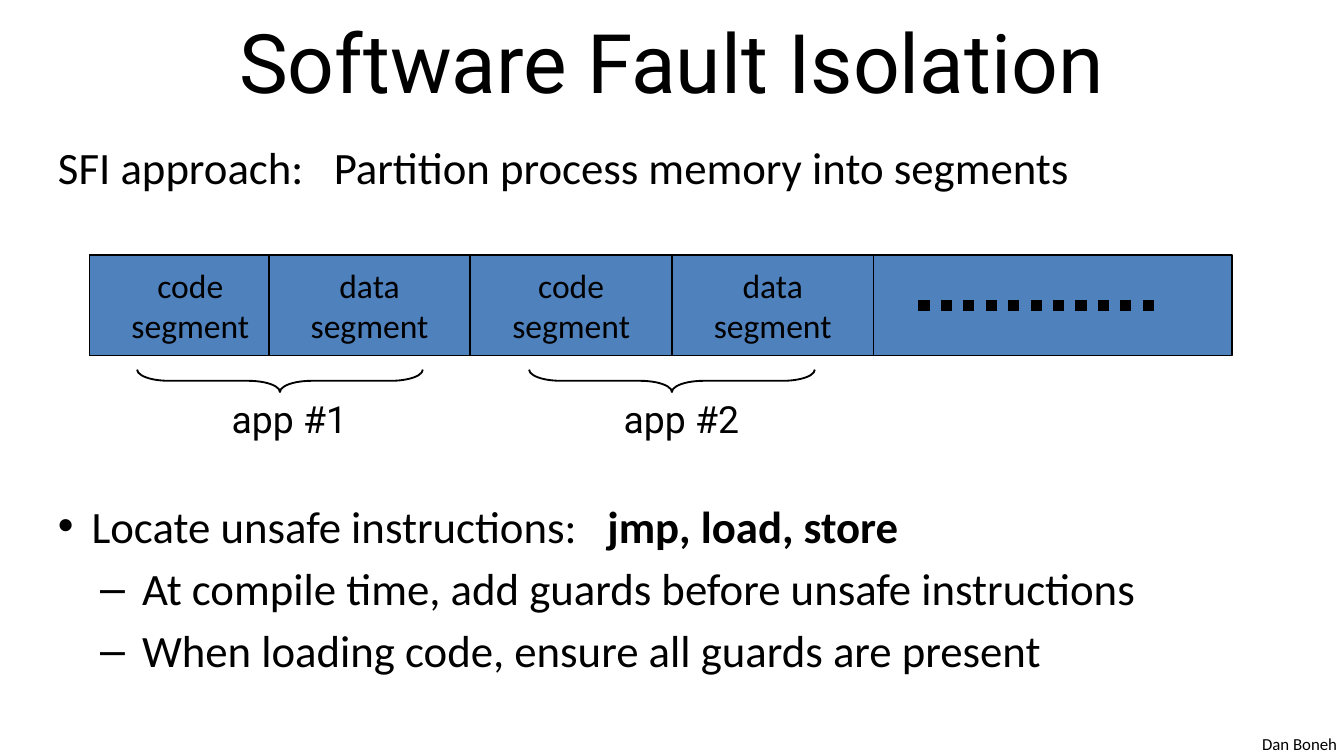
"""Build the Software Fault Isolation slide."""
from dataclasses import dataclass
from typing import Optional

from lxml.etree import SubElement
from pptx import Presentation
from pptx.dml.color import RGBColor as Rgb
from pptx.enum.dml import MSO_LINE_DASH_STYLE as Dash
from pptx.enum.shapes import MSO_CONNECTOR as Link, MSO_SHAPE as Shape
from pptx.enum.text import MSO_ANCHOR as Anchor, PP_ALIGN as Align
from pptx.oxml.ns import qn
from pptx.util import Emu, Pt

EMU_PER_PX = 9525


@dataclass(frozen=True)
class Theme:
    ink: Rgb = Rgb(0, 0, 0)
    segment: Rgb = Rgb(0x4F, 0x81, 0xBD)
    text_font: str = "Calibri"
    display_font: str = "Roboto"
    title: int = 44
    body: int = 24
    app: int = 20
    label: int = 18
    footer: int = 9
    outline: int = 1
    dots: int = 6


@dataclass(frozen=True)
class Box:
    left: int
    top: int
    width: int
    height: int


@dataclass(frozen=True)
class Line:
    text: str
    strong: str = ""
    bullet: str = ""
    margin: int = 0
    hanging: int = 0
    before: float = 0


@dataclass(frozen=True)
class Segment:
    left: int
    content: str


@dataclass(frozen=True)
class App:
    name: str
    center: int


THEME = Theme()
MEMORY = Box(64, 182, 816, 72)
SEGMENT_WIDTH = 144
SEGMENTS = (Segment(64, "code"), Segment(192, "data"),
            Segment(336, "code"), Segment(480, "data"))
APPS = (App("app #1", 200), App("app #2", 480))
POINTS = (
    Line("SFI approach:   Partition process memory into segments"),
    Line("Locate unsafe instructions:   ", strong="jmp, load, store",
         bullet="•", margin=24, hanging=24, before=163.5),
    Line("At compile time, add guards before unsafe instructions",
         bullet="–", margin=60, hanging=30, before=4.5),
    Line("When loading code, ensure all guards are present",
         bullet="–", margin=60, hanging=30, before=4.5),
)


def px(length: int) -> Emu:
    return Emu(length * EMU_PER_PX)


def place(box: Box) -> tuple[Emu, Emu, Emu, Emu]:
    return px(box.left), px(box.top), px(box.width), px(box.height)


def write(frame, *lines: Line, size: int, font: str = THEME.text_font,
          align: Align = Align.LEFT, anchor: Anchor = Anchor.TOP,
          wrap: bool = False) -> None:
    frame.word_wrap = wrap
    frame.vertical_anchor = anchor
    for number, line in enumerate(lines):
        paragraph = frame.add_paragraph() if number else frame.paragraphs[0]
        paragraph.alignment = align
        paragraph.space_before = Pt(line.before)
        if line.bullet:
            properties = paragraph._p.get_or_add_pPr()
            properties.set("marL", str(px(line.margin)))
            properties.set("indent", str(-px(line.hanging)))
            SubElement(properties, qn("a:buFont"), typeface="Arial")
            SubElement(properties, qn("a:buChar"), char=line.bullet)
        for words, bold in ((line.text, False), (line.strong, True)):
            if words:
                run = paragraph.add_run()
                run.text = words
                run.font.name = font
                run.font.size = Pt(size)
                run.font.bold = bold
                run.font.color.rgb = THEME.ink


def add_outlined(shapes, kind: Shape, box: Box, fill: Optional[Rgb] = None):
    shape = shapes.add_shape(kind, *place(box))
    shape.shadow.inherit = False
    if fill is None:
        shape.fill.background()
    else:
        shape.fill.solid()
        shape.fill.fore_color.rgb = fill
    shape.line.color.rgb = THEME.ink
    shape.line.width = Pt(THEME.outline)
    return shape


def add_segment(shapes, segment: Segment) -> None:
    box = Box(segment.left, MEMORY.top, SEGMENT_WIDTH, MEMORY.height)
    cell = add_outlined(shapes, Shape.RECTANGLE, box, THEME.segment)
    write(cell.text_frame, Line(segment.content), Line("segment"),
          size=THEME.label, align=Align.CENTER, anchor=Anchor.MIDDLE)


def add_continuation(shapes, left: int, right: int, middle: int) -> None:
    dots = shapes.add_connector(Link.STRAIGHT, px(left), px(middle), px(right), px(middle))
    dots.line.color.rgb = THEME.ink
    dots.line.width = Pt(THEME.dots)
    dots.line.dash_style = Dash.ROUND_DOT
    SubElement(dots._element.spPr, qn("a:effectLst"))


def add_app(shapes, app: App) -> None:
    group = shapes.add_group_shape().shapes
    thickness, span, middle = 16, 204, 272
    brace = add_outlined(group, Shape.LEFT_BRACE, Box(
        app.center - thickness // 2, middle - span // 2, thickness, span))
    brace.rotation = 270
    brace.adjustments[0] = 1.42
    name = group.add_textbox(*place(Box(app.center - 44, 278, 106, 42)))
    write(name.text_frame, Line(app.name), size=THEME.app, font=THEME.display_font)


def main() -> None:
    deck = Presentation()
    deck.slide_width, deck.slide_height = px(960), px(540)
    slide = deck.slides.add_slide(deck.slide_layouts[5])
    shapes = slide.shapes

    title = shapes.title
    title.left, title.top, title.width, title.height = place(Box(48, -2, 864, 90))
    write(title.text_frame, Line("Software Fault Isolation"), size=THEME.title,
          font=THEME.display_font, align=Align.CENTER, anchor=Anchor.MIDDLE, wrap=True)

    author = shapes.add_textbox(*place(Box(892, 519, 73, 24)))
    write(author.text_frame, Line("Dan Boneh"), size=THEME.footer)
    points = shapes.add_textbox(*place(Box(32, 95, 912, 445)))
    write(points.text_frame, *POINTS, size=THEME.body, wrap=True)

    add_outlined(shapes, Shape.RECTANGLE, MEMORY, THEME.segment)
    for segment in SEGMENTS:
        add_segment(shapes, segment)
    add_continuation(shapes, left=656, right=824, middle=218)
    for app in APPS:
        add_app(shapes, app)

    deck.save("out.pptx")


if __name__ == "__main__":
    main()
